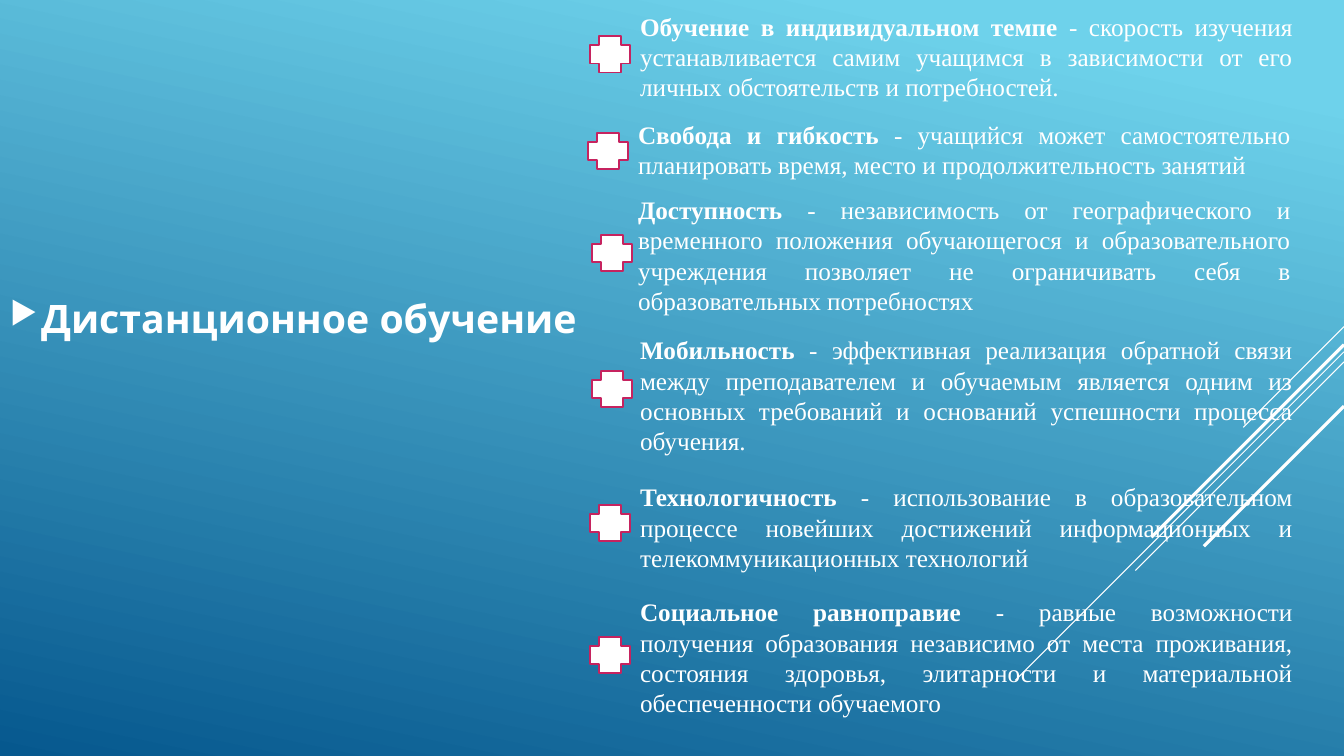
"""Build the slide on the advantages of distance learning."""
from dataclasses import dataclass
from typing import NamedTuple

from lxml.etree import SubElement
from pptx import Presentation
from pptx.dml.color import RGBColor
from pptx.enum.shapes import MSO_CONNECTOR as Connector, MSO_SHAPE as Preset
from pptx.enum.text import MSO_ANCHOR as Anchor, MSO_AUTO_SIZE as AutoSize, PP_ALIGN as Align
from pptx.oxml.ns import qn
from pptx.slide import Slide
from pptx.util import Emu, Pt


@dataclass(frozen=True)
class Theme:
    sky: RGBColor = RGBColor.from_string("6ED2EB")
    deep: RGBColor = RGBColor.from_string("06588E")
    white: RGBColor = RGBColor.from_string("FFFFFF")
    crimson: RGBColor = RGBColor.from_string("C6235F")
    title_font: str = "League Spartan"
    body_font: str = "Times New Roman"
    title_size: int = 28
    body_size: int = 18


class Ray(NamedTuple):
    top: int
    reach: int
    weight: float


class Benefit(NamedTuple):
    left: int
    top: int
    height: int
    plus_left: int
    plus_top: int
    name: str
    detail: str


THEME = Theme()
WIDTH, HEIGHT = 1333, 750
BENEFIT_WIDTH = 667
PLUS_WIDTH, PLUS_HEIGHT = 40, 36
TITLE_INDENT = 31

RAYS = [
    Ray(324, 100, 0.75),
    Ray(349, 326, 0.75),
    Ray(359, 207, 0.75),
    Ray(342, 191, 2.25),
    Ray(403, 139, 2.25),
]

BENEFITS = [
    Benefit(625, 6, 101, 585, 36, "Обучение в индивидуальном темпе",
            "скорость изучения устанавливается самим учащимся в зависимости "
            "от его личных обстоятельств и потребностей."),
    Benefit(623, 113, 71, 583, 132, "Свобода и гибкость",
            "учащийся может самостоятельно планировать время, место "
            "и продолжительность занятий"),
    Benefit(623, 188, 131, 587, 233, "Доступность",
            "независимость от географического и временного положения обучающегося "
            "и образовательного учреждения позволяет не ограничивать себя "
            "в образовательных потребностях"),
    Benefit(625, 327, 131, 587, 368, "Мобильность",
            "эффективная реализация обратной связи между преподавателем и обучаемым "
            "является одним из основных требований и оснований успешности "
            "процесса обучения."),
    Benefit(625, 473, 101, 585, 501, "Технологичность",
            "использование в образовательном процессе новейших достижений "
            "информационных и телекоммуникационных технологий"),
    Benefit(625, 587, 131, 585, 632, "Социальное равноправие",
            "равные возможности получения образования независимо от места проживания, "
            "состояния здоровья, элитарности и материальной обеспеченности обучаемого"),
]


def px(count: int) -> Emu:
    return Emu(count * 9144)


def add_span(para, text: str, font: str, size: int, bold: bool) -> None:
    span = para.add_run()
    span.text = text
    span.font.name = font
    span.font.size = Pt(size)
    span.font.bold = bold
    span.font.color.rgb = THEME.white


def paint_background(page: Slide) -> None:
    fill = page.background.fill
    fill.gradient()
    fill.gradient_angle = 258
    stops = [(0.1, THEME.sky), (1, THEME.deep)]
    for stop, (position, color) in zip(fill.gradient_stops, stops):
        stop.position = position
        stop.color.rgb = color


def add_ray(page: Slide, ray: Ray) -> None:
    line = page.shapes.add_connector(
        Connector.STRAIGHT, px(WIDTH), px(ray.top),
        px(WIDTH - ray.reach), px(ray.top + ray.reach))
    line.line.color.rgb = THEME.white
    line.line.width = Pt(ray.weight)
    SubElement(line._element.spPr, qn("a:effectLst"))


def add_title(page: Slide) -> None:
    box = page.shapes.add_textbox(px(0), px(273), px(933), px(84))
    frame = box.text_frame
    frame.word_wrap = True
    frame.vertical_anchor = Anchor.MIDDLE
    para = frame.paragraphs[0]
    para.space_before = Pt(5.6)
    para.space_after = Pt(6)
    properties = para._p.get_or_add_pPr()
    properties.set("marL", str(px(TITLE_INDENT)))
    properties.set("indent", str(px(-TITLE_INDENT)))
    bullet_color = SubElement(properties, qn("a:buClr"))
    SubElement(bullet_color, qn("a:srgbClr"), val=str(THEME.white))
    SubElement(properties, qn("a:buSzPct"), val="80000")
    SubElement(properties, qn("a:buChar"), char="▶")
    add_span(para, "Дистанционное обучение", THEME.title_font, THEME.title_size, True)


def add_benefit(page: Slide, benefit: Benefit) -> None:
    box = page.shapes.add_textbox(
        px(benefit.left), px(benefit.top), px(BENEFIT_WIDTH), px(benefit.height))
    frame = box.text_frame
    frame.word_wrap = True
    frame.auto_size = AutoSize.SHAPE_TO_FIT_TEXT
    para = frame.paragraphs[0]
    para.alignment = Align.JUSTIFY
    add_span(para, benefit.name, THEME.body_font, THEME.body_size, True)
    add_span(para, f" - {benefit.detail}", THEME.body_font, THEME.body_size, False)

    plus = page.shapes.add_shape(
        Preset.CROSS, px(benefit.plus_left), px(benefit.plus_top),
        px(PLUS_WIDTH), px(PLUS_HEIGHT))
    plus.shadow.inherit = False
    plus.fill.solid()
    plus.fill.fore_color.rgb = THEME.white
    plus.line.color.rgb = THEME.crimson
    plus.line.width = Pt(1.25)


def main() -> None:
    deck = Presentation()
    deck.slide_width, deck.slide_height = px(WIDTH), px(HEIGHT)
    page = deck.slides.add_slide(deck.slide_layouts[6])
    paint_background(page)
    for ray in RAYS:
        add_ray(page, ray)
    add_title(page)
    for benefit in BENEFITS:
        add_benefit(page, benefit)
    deck.save("out.pptx")


if __name__ == "__main__":
    main()
